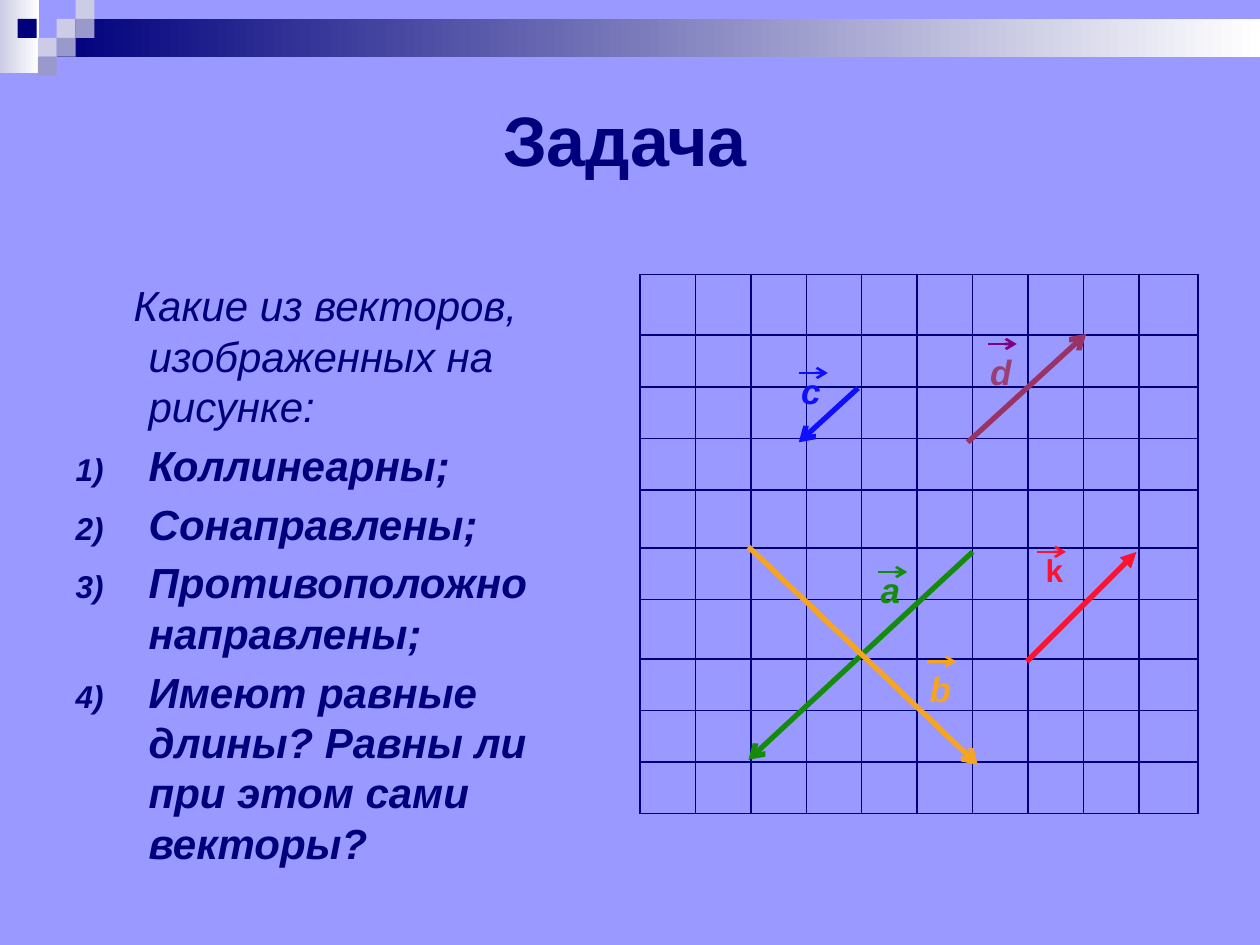
from lxml.etree import SubElement
from pptx import Presentation
from pptx.dml.color import RGBColor
from pptx.enum.dml import MSO_LINE
from pptx.enum.shapes import MSO_CONNECTOR, MSO_SHAPE
from pptx.enum.text import MSO_ANCHOR, MSO_AUTO_SIZE, PP_ALIGN
from pptx.oxml.ns import qn
from pptx.util import Inches, Pt

COLORS = {
    "background": "9999FF", "navy": "00007D", "pale": "CCCCE6",
    "grey": "9999CC", "white": "FFFFFF", "green": "148B0B",
    "orange": "F7A51F", "plum": "993366", "mauve": "993F75",
    "purple": "800080", "blue": "0F0FFF", "red": "FA142F",
}
TASKS = [
    "Коллинеарны;",
    "Сонаправлены;",
    "Противоположно направлены;",
    "Имеют равные длины? Равны ли при этом сами векторы?",
]
COLUMN_WIDTHS = [0.44] * 9 + [0.47]
ROW_HEIGHTS = [0.48, 0.41, 0.41, 0.41, 0.46, 0.41, 0.47, 0.41, 0.41, 0.41]
# start, end, colour, arrowhead
VECTORS = [
    ((7.72, 4.38), (5.94, 6.03), "green", "arrow"),
    ((7.68, 3.51), (8.62, 2.65), "plum", "arrow"),
    ((6.81, 3.08), (6.34, 3.51), "blue", "arrow"),
    ((5.94, 4.34), (7.76, 6.07), "orange", "arrow"),
    ((8.15, 5.25), (9.02, 4.38), "red", "triangle"),
]
# text, left, top, width, colour
LABELS = [
    ("a", 6.89, 4.46, 0.31, "green"),
    ("b", 7.28, 5.25, 0.47, "orange"),
    ("d", 7.76, 2.73, 0.31, "mauve"),
    ("c", 6.26, 2.88, 0.32, "blue"),
]
# left, top, colour of the small arrow above each letter
OVERARROWS = [
    (7.84, 2.73, "purple"), (6.97, 4.54, "green"), (6.34, 2.96, "blue"),
    (7.36, 5.25, "orange"), (8.23, 4.38, "red"),
]


def rgb(name):
    return RGBColor.from_string(COLORS[name])


def write(p, text, size=24, color="navy", bold=False, italic=False):
    r = p.add_run()
    r.text = text
    f = r.font
    f.name, f.size, f.bold, f.italic = "Arial", Pt(size), bold, italic
    f.color.rgb = rgb(color)


def place(shape, left, top, width, height):
    shape.left, shape.top = Inches(left), Inches(top)
    shape.width, shape.height = Inches(width), Inches(height)


def add_rect(s, left, top, width, height, color, end_color=None):
    """Add a borderless rectangle, shaded left to right if end_color is given."""
    sp = s.shapes.add_shape(MSO_SHAPE.RECTANGLE, Inches(left), Inches(top),
                            Inches(width), Inches(height))
    sp.shadow.inherit = False
    sp.line.fill.background()
    if end_color:
        sp.fill.gradient()
        sp.fill.gradient_angle = 0
        for stop, name, position in zip(sp.fill.gradient_stops,
                                        (color, end_color), (0, 1)):
            stop.color.rgb = rgb(name)
            stop.position = position
    else:
        sp.fill.solid()
        sp.fill.fore_color.rgb = rgb(color)


def add_header(s):
    add_rect(s, 0, 0, 0.31, 0.58, "pale", "white")
    add_rect(s, 0.45, 0.15, 9.55, 0.3, "navy", "white")
    for left, top, color in [
        (0.45, 0.15, "pale"), (0.6, 0, "pale"), (0.6, 0.15, "grey"),
        (0.3, 0.3, "pale"), (0.14, 0.15, "navy"), (0.45, 0.3, "grey"),
        (0.3, 0.45, "grey"),
    ]:
        add_rect(s, left, top, 0.15, 0.15, color)


def add_title(s):
    title = s.shapes.title
    place(title, 0.5, 0.5, 9, 1.2)
    tf = title.text_frame
    tf.auto_size = MSO_AUTO_SIZE.NONE
    tf.vertical_anchor = MSO_ANCHOR.MIDDLE
    tf.margin_left = Inches(0.02)
    p = tf.paragraphs[0]
    p.alignment = PP_ALIGN.CENTER
    write(p, "Задача", size=40, bold=True)


def format_list_item(p, indent, numbered):
    p.space_before = Pt(4.8)
    pPr = p._p.get_or_add_pPr()
    pPr.set("marL", str(Inches(0.58)))
    pPr.set("indent", str(Inches(indent)))
    if numbered:
        color = SubElement(pPr, qn("a:buClr"))
        SubElement(color, qn("a:srgbClr"), val=COLORS["navy"])
        SubElement(pPr, qn("a:buSzPct"), val="75000")
        SubElement(pPr, qn("a:buFont"), typeface="Arial")
        SubElement(pPr, qn("a:buAutoNum"), type="arabicParenR")
    else:
        SubElement(pPr, qn("a:buNone"))


def add_tasks(s):
    body = s.placeholders[1]
    place(body, 0.5, 2.17, 4.42, 4.81)
    tf = body.text_frame
    tf.auto_size = MSO_AUTO_SIZE.NONE
    p = tf.paragraphs[0]
    format_list_item(p, -0.12, numbered=False)
    write(p, "Какие из векторов, изображенных на рисунке:", italic=True)
    for task in TASKS:
        p = tf.add_paragraph()
        format_list_item(p, -0.58, numbered=True)
        write(p, task, bold=True, italic=True)


def set_borders(cell):
    tcPr = cell._tc.get_or_add_tcPr()
    for i, side in enumerate(("lnL", "lnR", "lnT", "lnB")):
        ln = tcPr.makeelement(qn(f"a:{side}"), {"w": str(Pt(1))})
        fill = SubElement(ln, qn("a:solidFill"))
        SubElement(fill, qn("a:srgbClr"), val=COLORS["navy"])
        tcPr.insert(i, ln)


def add_grid(s):
    table = s.shapes.add_table(
        len(ROW_HEIGHTS), len(COLUMN_WIDTHS), Inches(5.08), Inches(2.18),
        Inches(sum(COLUMN_WIDTHS)), Inches(sum(ROW_HEIGHTS))).table
    table.first_row = table.horz_banding = False
    for column, width in zip(table.columns, COLUMN_WIDTHS):
        column.width = Inches(width)
    for row, height in zip(table.rows, ROW_HEIGHTS):
        row.height = Inches(height)
    for cell in table.iter_cells():
        cell.fill.background()
        set_borders(cell)
    k_cell = table.cell(5, 7)
    k_cell.margin_left = Inches(0.14)
    write(k_cell.text_frame.paragraphs[0], "k", size=18, color="red", bold=True)


def add_arrow(s, start, end, color, width=3, head="arrow"):
    c = s.shapes.add_connector(MSO_CONNECTOR.STRAIGHT,
                               *map(Inches, (*start, *end)))
    c.line.width = Pt(width)
    c.line.color.rgb = rgb(color)
    c.line.dash_style = MSO_LINE.SOLID
    SubElement(c.line._get_or_add_ln(), qn("a:tailEnd"), type=head)
    SubElement(c._element.spPr, qn("a:effectLst"))


def add_label(s, text, left, top, width, color):
    tf = s.shapes.add_textbox(Inches(left), Inches(top), Inches(width),
                              Inches(0.43)).text_frame
    tf.word_wrap = True
    write(tf.paragraphs[0], text, size=20, color=color, bold=True, italic=True)


def main():
    prs = Presentation()
    prs.slide_width, prs.slide_height = Inches(10), Inches(7.5)
    s = prs.slides.add_slide(prs.slide_layouts[1])
    s.background.fill.solid()
    s.background.fill.fore_color.rgb = rgb("background")

    add_header(s)
    add_title(s)
    add_tasks(s)
    add_grid(s)
    for start, end, color, head in VECTORS:
        add_arrow(s, start, end, color, head=head)
    for label in LABELS:
        add_label(s, *label)
    for left, top, color in OVERARROWS:
        add_arrow(s, (left, top), (left + 0.23, top), color, width=1.5)
    prs.save("out.pptx")


if __name__ == "__main__":
    main()
